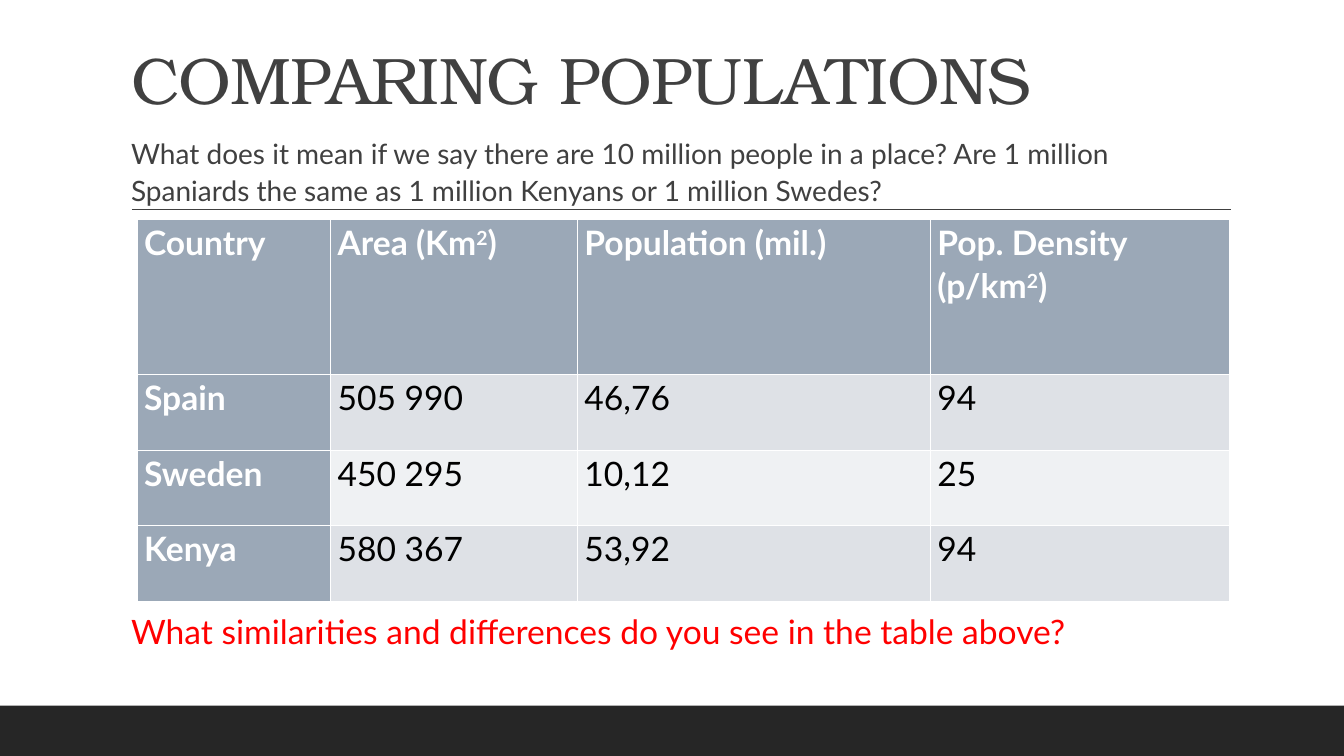
"""Build the slide comparing the populations of three countries."""
from lxml import etree
from pptx import Presentation
from pptx.dml.color import RGBColor
from pptx.enum import shapes, text
from pptx.oxml import ns
from pptx.util import Pt

TITLE = "COMPARING POPULATIONS"
INTRO = ("What does it mean if we say there are 10 million people in a place? "
         "Are 1 million Spaniards the same as 1 million Kenyans or 1 million Swedes?")
QUESTION = "What similarities and differences do you see in the table above?"
ROWS = [
    [["Country"], ["Area (Km", "2", ")"], ["Population (mil.)"],
     ["Pop. Density (p/km", "2", ")"]],
    [["Spain"], ["505 990"], ["46,76"], ["94"]],
    [["Sweden"], ["450 295"], ["10,12"], ["25"]],
    [["Kenya"], ["580 367"], ["53,92"], ["94"]],
]
COL_WIDTHS = [138.2, 176.4, 252, 213.8]
ROW_HEIGHTS = [110.6, 54, 54, 54]

WIDTH, HEIGHT, FOOTER = 960, 540, 36
LEFT, TEXT_WIDTH = 86.4, 792
TITLE_FONT, FONT = "TeX Gyre Bonum", "Lato"
WHITE = RGBColor(0xFF, 0xFF, 0xFF)
BLACK = RGBColor(0, 0, 0)
RED = RGBColor(0xFF, 0, 0)
GREY = RGBColor(0x40, 0x40, 0x40)
DARK = RGBColor(0x26, 0x26, 0x26)
SLATE = RGBColor(0x9B, 0xA8, 0xB7)
BANDS = [RGBColor(0xEF, 0xF1, 0xF3), RGBColor(0xDE, 0xE1, 0xE6)]


def place(sp, x, y, w, h):
    sp.left, sp.top, sp.width, sp.height = Pt(x), Pt(y), Pt(w), Pt(h)


def style(r, size, color, name=FONT, bold=False):
    r.font.size, r.font.name, r.font.bold = Pt(size), name, bold
    r.font.color.rgb = color


def space(p, line, before, after):
    p.line_spacing, p.space_before, p.space_after = line, Pt(before), Pt(after)


def add_title(s):
    sp = s.shapes.title
    place(sp, LEFT, 22.3, TEXT_WIDTH, 66.2)
    tf = sp.text_frame
    tf.text = TITLE
    tf.auto_size = text.MSO_AUTO_SIZE.NONE
    tf.vertical_anchor = text.MSO_ANCHOR.BOTTOM
    p = tf.paragraphs[0]
    p.alignment = text.PP_ALIGN.LEFT
    space(p, 0.9, 0, 0)
    style(p.runs[0], 47, GREY, TITLE_FONT)
    p.runs[0]._r.get_or_add_rPr().set("spc", "-50")


def add_body(s):
    sp = s.placeholders[1]
    place(sp, LEFT, 91.4, TEXT_WIDTH, 407.5)
    tf = sp.text_frame
    tf.text = f"{INTRO}\n{QUESTION}"
    tf.auto_size = text.MSO_AUTO_SIZE.NONE
    tf.vertical_anchor = text.MSO_ANCHOR.TOP
    tf.margin_left = tf.margin_right = 0
    looks = [(20, GREY, 12), (24, RED, 284)]
    for p, (size, color, before) in zip(tf.paragraphs, looks):
        space(p, 1.1, before, 2)
        style(p.runs[0], size, color)
        pPr = p._p.get_or_add_pPr()
        pPr.set("marL", str(Pt(7.2)))
        pPr.set("indent", "0")
        etree.SubElement(pPr, ns.qn("a:buNone"))


def add_table(s):
    frame = s.shapes.add_table(len(ROWS), len(COL_WIDTHS), Pt(97.9), Pt(157),
                               Pt(sum(COL_WIDTHS)), Pt(sum(ROW_HEIGHTS)))
    table = frame.table
    table.first_col = True
    for col, width in zip(table.columns, COL_WIDTHS):
        col.width = Pt(width)
    for i, (row, height) in enumerate(zip(ROWS, ROW_HEIGHTS)):
        table.rows[i].height = Pt(height)
        for j, parts in enumerate(row):
            fill_cell(table.cell(i, j), parts, i == 0 or j == 0, BANDS[i % 2])


def fill_cell(cell, parts, heading, band):
    cell.fill.solid()
    cell.fill.fore_color.rgb = SLATE if heading else band
    cell.margin_left = cell.margin_right = Pt(5)
    cell.margin_top = cell.margin_bottom = 0
    p = cell.text_frame.paragraphs[0]
    space(p, 1.07, 0, 8)
    for k, part in enumerate(parts):
        r = p.add_run()
        r.text = part
        style(r, 24, WHITE if heading else BLACK, bold=heading)
        if k == 1:
            r._r.get_or_add_rPr().set("baseline", "30000")


def add_decor(s):
    bar = s.shapes.add_shape(shapes.MSO_SHAPE.RECTANGLE, 0, Pt(HEIGHT - FOOTER),
                             Pt(WIDTH), Pt(FOOTER))
    bar.shadow.inherit = False
    bar.fill.solid()
    bar.fill.fore_color.rgb = DARK
    bar.line.fill.background()
    rule = s.shapes.add_connector(shapes.MSO_CONNECTOR.STRAIGHT,
                                  Pt(94.3), Pt(149.5), Pt(879), Pt(149.5))
    rule.line.color.rgb = GREY
    rule.line.width = Pt(1)
    etree.SubElement(rule._element.spPr, ns.qn("a:effectLst"))


def main():
    prs = Presentation()
    prs.slide_width, prs.slide_height = Pt(WIDTH), Pt(HEIGHT)
    s = prs.slides.add_slide(prs.slide_layouts[1])
    add_decor(s)
    add_title(s)
    add_body(s)
    add_table(s)
    prs.save("out.pptx")


if __name__ == "__main__":
    main()
